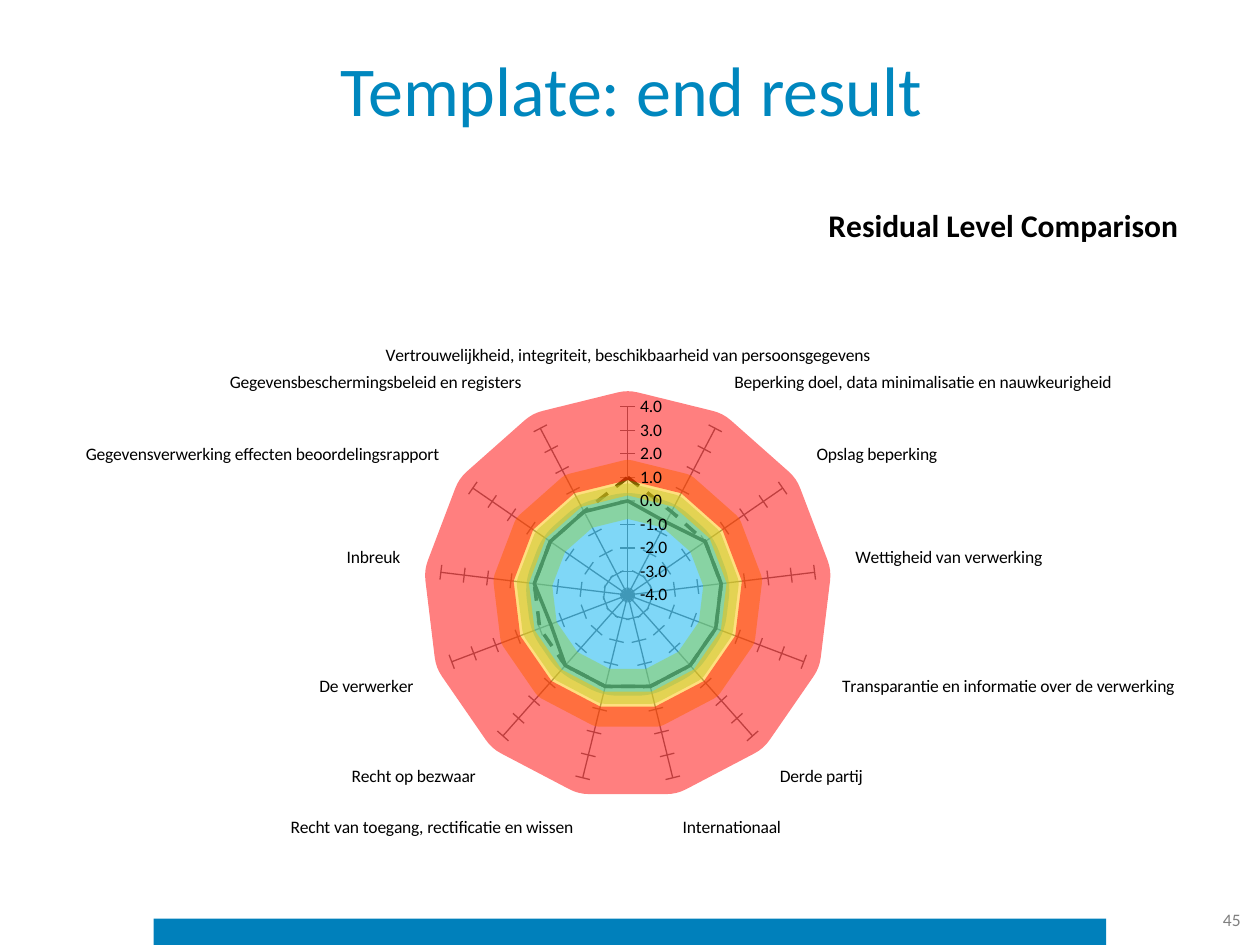
from lxml import etree
from pptx import Presentation
from pptx.chart.data import CategoryChartData
from pptx.dml.color import RGBColor
from pptx.enum.chart import XL_CHART_TYPE, XL_MARKER_STYLE, XL_TICK_MARK
from pptx.enum.dml import MSO_LINE
from pptx.enum.shapes import MSO_SHAPE
from pptx.enum.text import MSO_ANCHOR, PP_ALIGN
from pptx.oxml import parse_xml
from pptx.oxml.ns import nsdecls, qn
from pptx.util import Cm, Pt

FONT = "Calibri"
TITLE_BLUE = RGBColor(0x00, 0x87, 0xBE)
BAR_BLUE = RGBColor(0x00, 0x80, 0xBB)
GRAY = RGBColor(0x80, 0x80, 0x80)
BLACK = RGBColor(0x00, 0x00, 0x00)
SKY = RGBColor(0x00, 0xB0, 0xF0)
GREEN = RGBColor(0x92, 0xD0, 0x50)
AMBER = RGBColor(0xFF, 0xC0, 0x00)
RED = RGBColor(0xFF, 0x00, 0x00)

TOPICS = [
    "Vertrouwelijkheid, integriteit, beschikbaarheid van persoonsgegevens",
    "Beperking doel, data minimalisatie en nauwkeurigheid",
    "Opslag beperking",
    "Wettigheid van verwerking",
    "Transparantie en informatie over de verwerking",
    "Derde partij",
    "Internationaal",
    "Recht van toegang, rectificatie en wissen",
    "Recht op bezwaar",
    "De verwerker",
    "Inbreuk",
    "Gegevensverwerking effecten beoordelingsrapport",
    "Gegevensbeschermingsbeleid en registers",
]
COUNT = len(TOPICS)

# Values, colour, line width, dash, opacity in percent
LEVELS = [
    ([0, -0.5] + [0] * 7 + [-0.5] + [0] * 3, BLACK, 2, MSO_LINE.SOLID, 100),
    ([1] + [0] * (COUNT - 1), BLACK, 2, MSO_LINE.DASH, 100),
    ([-2.5] * COUNT, SKY, 76, MSO_LINE.SOLID, 50),
    ([0] * COUNT, GREEN, 20, MSO_LINE.SOLID, 50),
    ([1] * COUNT, AMBER, 20, MSO_LINE.SOLID, 50),
    ([2.8] * COUNT, RED, 50, MSO_LINE.SOLID, 50),
]


def add_text(slide, text, box, size, color, align):
    text_box = slide.shapes.add_textbox(*(Cm(length) for length in box))
    frame = text_box.text_frame
    frame.word_wrap = True
    frame.vertical_anchor = MSO_ANCHOR.MIDDLE
    frame.text = text
    paragraph = frame.paragraphs[0]
    paragraph.alignment = align
    font = paragraph.runs[0].font
    font.name, font.size = FONT, Pt(size)
    font.color.rgb = color


def add_bar(slide, box, color):
    bar = slide.shapes.add_shape(
        MSO_SHAPE.RECTANGLE, *(Cm(length) for length in box))
    bar.shadow.inherit = False
    bar.fill.solid()
    bar.fill.fore_color.rgb = color
    bar.line.fill.background()


def place_heading(heading, x, y):
    """Put the chart heading at fractions of the chart area."""
    element = heading._element
    for old in element.findall(qn("c:layout")):
        element.remove(old)
    element.insert(1, parse_xml(
        f'<c:layout {nsdecls("c")}><c:manualLayout>'
        '<c:xMode val="edge"/><c:yMode val="edge"/>'
        f'<c:x val="{x}"/><c:y val="{y}"/>'
        '</c:manualLayout></c:layout>'))


def style_level(series, color, width, dash, opacity):
    series.smooth = False
    series.marker.style = XL_MARKER_STYLE.NONE
    line = series.format.line
    line.color.rgb = color
    line.width = Pt(width)
    line.dash_style = dash
    if opacity < 100:
        rgb = series.format.line._ln.find(".//" + qn("a:srgbClr"))
        etree.SubElement(rgb, qn("a:alpha")).set("val", str(opacity * 1000))


def style_axes(chart):
    topic_axis, level_axis = chart.category_axis, chart.value_axis
    topic_axis.has_major_gridlines = True
    topic_axis.major_gridlines.format.line.color.rgb = GRAY
    level_axis.has_major_gridlines = False
    level_axis.minimum_scale, level_axis.maximum_scale = -4, 4
    level_axis.major_unit = 1
    level_axis.major_tick_mark = XL_TICK_MARK.CROSS
    level_axis.tick_labels.number_format = "0.0"
    level_axis.tick_labels.number_format_is_linked = False
    level_axis.format.line.color.rgb = GRAY


def add_radar(slide, box):
    data = CategoryChartData()
    data.categories = TOPICS
    for number, (values, *_) in enumerate(LEVELS, 1):
        data.add_series(f"Series {number}", values)
    chart = slide.shapes.add_chart(
        XL_CHART_TYPE.RADAR, *(Cm(length) for length in box), data).chart
    chart.font.name, chart.font.size = FONT, Pt(10)
    chart.font.color.rgb = BLACK
    chart.has_legend = False
    chart.plots[0].vary_by_categories = False

    # Heading at the upper right of the chart
    chart.has_title = True
    heading = chart.chart_title
    heading.text_frame.text = "Residual Level Comparison"
    font = heading.text_frame.paragraphs[0].runs[0].font
    font.name, font.size, font.bold = FONT, Pt(18), True
    font.color.rgb = BLACK
    place_heading(heading, 0.67, 0.01)

    # Axes and risk bands
    style_axes(chart)
    for series, (_, *style) in zip(chart.plots[0].series, LEVELS):
        style_level(series, *style)


def main():
    presentation = Presentation()
    presentation.slide_width, presentation.slide_height = Cm(25.4), Cm(19.05)
    slide = presentation.slides.add_slide(presentation.slide_layouts[6])

    # Footer bar
    add_bar(slide, (3.1, 18.52, 19.2, 0.53), BAR_BLUE)
    # Slide title
    add_text(slide, "Template: end result", (1.3, 0.5, 22.86, 2.57),
             40, TITLE_BLUE, PP_ALIGN.CENTER)
    # Radar chart
    add_radar(slide, (1.27, 3.84, 22.86, 14.6))
    # Page number
    add_text(slide, "45", (23.18, 18.03, 2.08, 1.02), 10, GRAY, PP_ALIGN.RIGHT)

    presentation.save("out.pptx")


if __name__ == "__main__":
    main()
